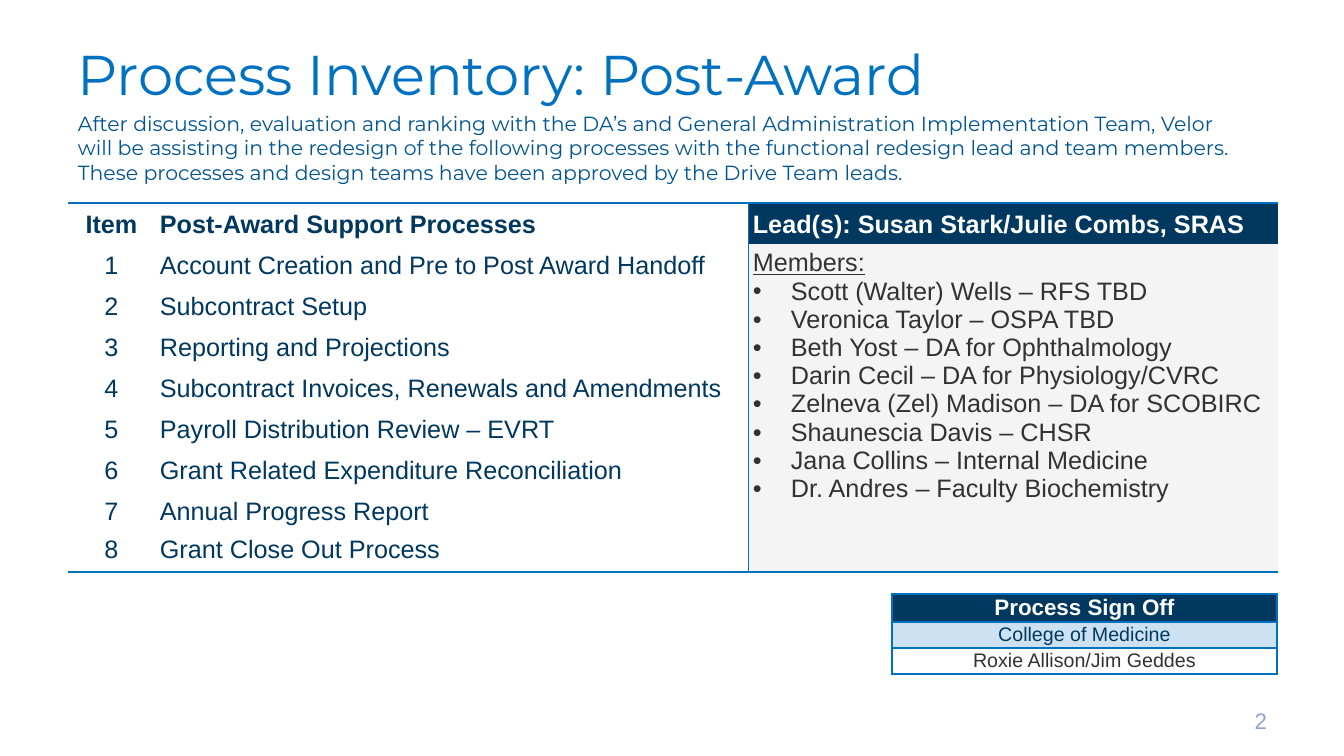
from lxml.etree import SubElement
from pptx import Presentation
from pptx.dml.color import RGBColor
from pptx.enum.text import MSO_ANCHOR as Anchor, PP_ALIGN as Align
from pptx.oxml.ns import qn
from pptx.util import Emu, Pt

PX_PER_INCH = 100.8
COLORS = {
    "blue": "0070C0", "navy": "003860", "body": "005490", "text": "323235",
    "white": "FFFFFF", "panel": "F4F4F4", "pale": "CCE2F2", "number": "8CA4D2",
}
PROCESSES = [
    "Account Creation and Pre to Post Award Handoff",
    "Subcontract Setup",
    "Reporting and Projections",
    "Subcontract Invoices, Renewals and Amendments",
    "Payroll Distribution Review – EVRT",
    "Grant Related Expenditure Reconciliation",
    "Annual Progress Report",
    "Grant Close Out Process",
]
MEMBERS = [
    "Scott (Walter) Wells – RFS TBD",
    "Veronica Taylor – OSPA TBD",
    "Beth Yost – DA for Ophthalmology",
    "Darin Cecil – DA for Physiology/CVRC",
    "Zelneva (Zel) Madison – DA for SCOBIRC",
    "Shaunescia Davis – CHSR",
    "Jana Collins – Internal Medicine",
    "Dr. Andres – Faculty Biochemistry",
]
INTRO = (
    "After discussion, evaluation and ranking with the DA’s and General "
    "Administration Implementation Team, Velor will be assisting in the redesign "
    "of the following processes with the functional redesign lead and team members. "
    "These processes and design teams have been approved by the Drive Team leads."
)


def px(length):
    return Emu(round(length * 914400 / PX_PER_INCH))


def rgb(name):
    return RGBColor.from_string(COLORS[name])


def add_run(paragraph, text, size, color, font="Arial", bold=False, underline=False):
    run = paragraph.add_run()
    run.text = text
    run.font.name = font
    run.font.size = Pt(size)
    run.font.bold = bold
    run.font.underline = underline
    run.font.color.rgb = rgb(color)


def add_text(slide, box, text, size, color, font, align=Align.LEFT,
             anchor=Anchor.TOP, spacing=None):
    shape = slide.shapes.add_textbox(*map(px, box))
    frame = shape.text_frame
    frame.word_wrap = True
    frame.vertical_anchor = anchor
    paragraph = frame.paragraphs[0]
    paragraph.alignment = align
    paragraph.line_spacing = spacing
    add_run(paragraph, text, size, color, font)


def add_table(slide, left, top, columns, rows):
    shape = slide.shapes.add_table(len(rows), len(columns), px(left), px(top),
                                   px(sum(columns)), px(sum(rows)))
    table = shape.table
    table.first_row = table.horz_banding = False
    for column, width in zip(table.columns, columns):
        column.width = px(width)
    for row, height in zip(table.rows, rows):
        row.height = px(height)
    return table


def style_cell(cell, fill, borders, inset=5, anchor=Anchor.BOTTOM):
    """Borders map a side (L, R, T, B) to a line width in points."""
    cell.margin_left = cell.margin_right = px(inset)
    cell.margin_top = cell.margin_bottom = px(inset)
    cell.vertical_anchor = anchor
    properties = cell._tc.get_or_add_tcPr()
    for side in "LRTB":
        width = borders.get(side, 0)
        line = SubElement(properties, qn(f"a:ln{side}"), w=str(Pt(width)))
        if width:
            solid = SubElement(line, qn("a:solidFill"))
            SubElement(solid, qn("a:srgbClr"), val=COLORS["blue"])
        else:
            SubElement(line, qn("a:noFill"))
    cell.fill.solid()
    cell.fill.fore_color.rgb = rgb(fill)


def fill_cell(cell, text, size, color, align=Align.LEFT, bold=False):
    paragraph = cell.text_frame.paragraphs[0]
    paragraph.alignment = align
    add_run(paragraph, text, size, color, bold=bold)


def add_bullet(frame, text, size, color, indent):
    paragraph = frame.add_paragraph()
    properties = paragraph._p.get_or_add_pPr()
    properties.set("marL", str(px(indent)))
    properties.set("indent", str(-px(indent)))
    SubElement(properties, qn("a:buFont"), typeface="Arial")
    SubElement(properties, qn("a:buChar"), char="•")
    add_run(paragraph, text, size, color)


def add_process_table(slide):
    last = len(PROCESSES)
    table = add_table(slide, 68, 203, [87, 593, 530], [41] * (last + 1))

    # Item numbers and process names
    entries = [("Item", "Post-Award Support Processes")]
    entries += [(str(number), name) for number, name in enumerate(PROCESSES, 1)]
    for row, (item, name) in enumerate(entries):
        edges = {0: {"T": 2}, last: {"B": 2}}.get(row, {})
        anchor = Anchor.TOP if row == last else Anchor.BOTTOM
        item_cell, name_cell = table.cell(row, 0), table.cell(row, 1)
        style_cell(item_cell, "white", edges, anchor=anchor)
        style_cell(name_cell, "white", {**edges, "R": 0.5}, anchor=anchor)
        fill_cell(item_cell, item, 18, "navy", Align.CENTER, bold=row == 0)
        fill_cell(name_cell, name, 18, "navy", bold=row == 0)

    # Lead and team members
    lead = table.cell(0, 2)
    style_cell(lead, "navy", {"L": 0.5, "T": 2})
    fill_cell(lead, "Lead(s): Susan Stark/Julie Combs, SRAS", 18, "white", bold=True)
    team = table.cell(1, 2)
    team.merge(table.cell(last, 2))
    for row in range(1, last + 1):
        edges = {"L": 0.5, "B": 2} if row in (1, last) else {"L": 0.5}
        style_cell(table.cell(row, 2), "panel", edges, anchor=Anchor.TOP)
    add_run(team.text_frame.paragraphs[0], "Members:", 18, "text", underline=True)
    for member in MEMBERS:
        add_bullet(team.text_frame, member, 18, "text", 38)


def add_sign_off_table(slide):
    entries = [
        ("Process Sign Off", 16, "white", "navy", {"T": 1, "B": 2}),
        ("College of Medicine", 14, "navy", "pale", {"T": 2, "B": 1}),
        ("Roxie Allison/Jim Geddes", 14, "text", "white", {"T": 1, "B": 1}),
    ]
    table = add_table(slide, 892, 594, [385], [28, 26, 26])
    for row, (text, size, color, fill, edges) in enumerate(entries):
        cell = table.cell(row, 0)
        style_cell(cell, fill, {"L": 1, "R": 1, **edges}, 0, Anchor.MIDDLE)
        fill_cell(cell, text, size, color, Align.CENTER, bold=row == 0)


def main():
    presentation = Presentation()
    presentation.slide_width, presentation.slide_height = px(1344), px(756)
    slide = presentation.slides.add_slide(presentation.slide_layouts[6])

    # Heading and introduction
    add_text(slide, (68, 36, 1210, 70), "Process Inventory: Post-Award", 40, "blue",
             "Montserrat", spacing=Pt(47.2))
    add_text(slide, (68, 106, 1180, 49), INTRO, 14.6, "body", "Montserrat")

    # Tables
    add_process_table(slide)
    add_sign_off_table(slide)

    # Slide number
    add_text(slide, (964, 701, 313, 40), "2", 16, "number", "Arial",
             Align.RIGHT, Anchor.MIDDLE)
    presentation.save("out.pptx")


if __name__ == "__main__":
    main()
